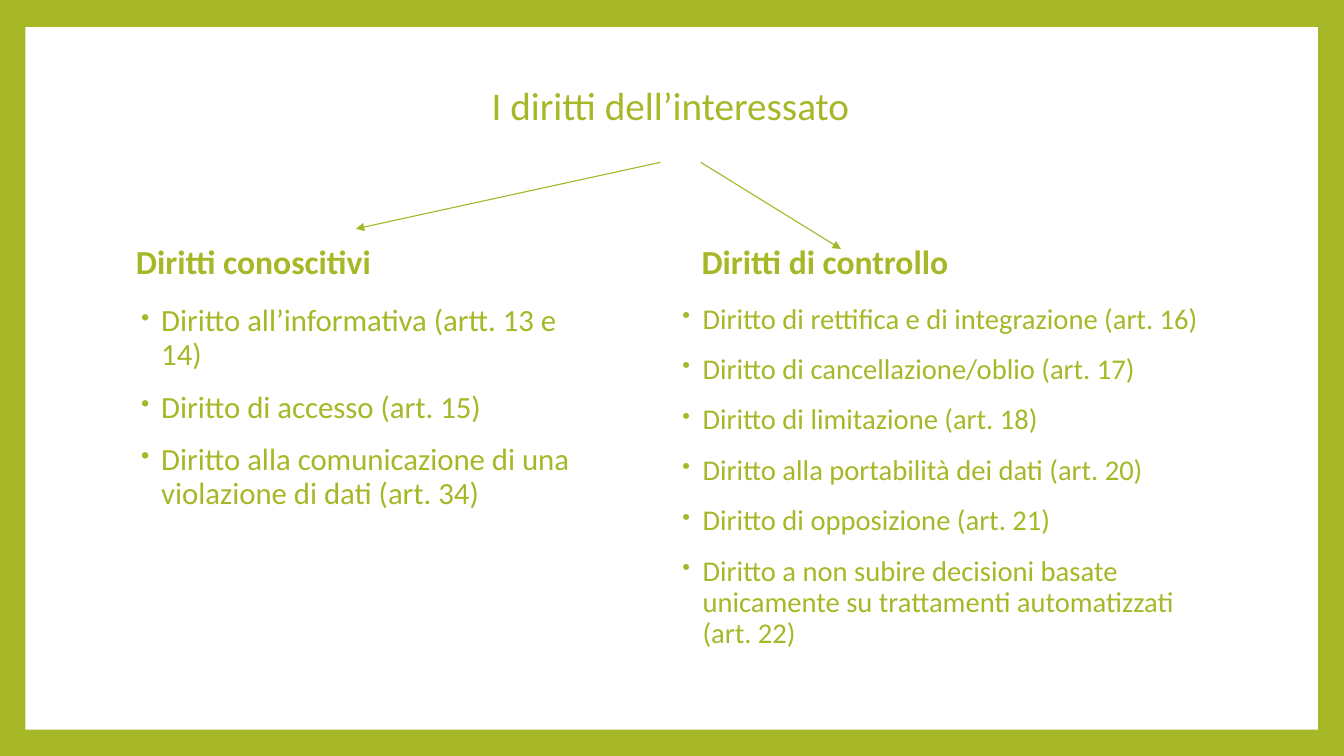
from lxml.etree import SubElement
from pptx import Presentation
from pptx.dml.color import RGBColor
from pptx.enum.shapes import MSO_CONNECTOR as CONN, MSO_SHAPE as SHAPE
from pptx.enum.text import MSO_ANCHOR as ANCHOR, PP_ALIGN as ALIGN
from pptx.oxml.ns import qn
from pptx.util import Inches, Pt

GREEN = RGBColor(0xA6, 0xB7, 0x27)
WHITE = RGBColor(0xFF, 0xFF, 0xFF)
WIDTH, HEIGHT = Inches(13.33), Inches(7.5)

# Positions are percentages of the slide's width and height.
LEFT, RIGHT = 9.38, 51.46
HEADING_TOP, HEADING_W, HEADING_H = 29.2, 39, 11.33
LIST_H = 49.33

COLUMNS = [
    {
        "heading": "Diritti conoscitivi",
        "heading_x": LEFT,
        "list_box": (LEFT, 39.73, 36, LIST_H),
        "size": 22,
        "rights": [
            "Diritto all’informativa (artt. 13 e 14)",
            "Diritto di accesso (art. 15)",
            "Diritto alla comunicazione di una violazione di dati (art. 34)",
        ],
        "arrow": (49.14, 21.47, 26.48, 30.27),
    },
    {
        "heading": "Diritti di controllo",
        "heading_x": RIGHT,
        "list_box": (49.66, 39.6, 40.8, LIST_H),
        "size": 20.4,
        "rights": [
            "Diritto di rettifica e di integrazione (art. 16)",
            "Diritto di cancellazione/oblio (art. 17)",
            "Diritto di limitazione (art. 18)",
            "Diritto alla portabilità dei dati (art. 20)",
            "Diritto di opposizione (art. 21)",
            "Diritto a non subire decisioni basate unicamente su trattamenti "
            "automatizzati (art. 22)",
        ],
        "arrow": (52.14, 21.47, 62.57, 32.93),
    },
]


def to_emu(box):
    """Turn alternating horizontal and vertical percentages into lengths."""
    return [round(share / 100 * (HEIGHT if i % 2 else WIDTH))
            for i, share in enumerate(box)]


def add_panel(slide, box):
    sp = slide.shapes.add_shape(SHAPE.RECTANGLE, *to_emu(box))
    sp.shadow.inherit = False
    sp.fill.solid()
    sp.fill.fore_color.rgb = WHITE
    sp.line.fill.background()


def add_bullet(p):
    pPr = p._p.get_or_add_pPr()
    pPr.set("marL", str(Inches(0.25)))
    pPr.set("indent", str(Inches(-0.2)))
    color = SubElement(pPr, qn("a:buClr"))
    SubElement(color, qn("a:srgbClr"), val=str(GREEN))
    SubElement(pPr, qn("a:buSzPct"), val="80000")
    SubElement(pPr, qn("a:buChar"), char="•")


def add_text(slide, box, lines, size, bold=False, align=ALIGN.LEFT,
             anchor=ANCHOR.MIDDLE, bullets=False):
    tf = slide.shapes.add_textbox(*to_emu(box)).text_frame
    tf.word_wrap = True
    tf.vertical_anchor = anchor
    font_format = {"name": "Calibri", "size": Pt(size), "bold": bold}
    for i, line in enumerate(lines):
        p = tf.add_paragraph() if i else tf.paragraphs[0]
        p.alignment = align
        p.line_spacing = 0.9
        if bullets:
            p.space_before = Pt(14)
            add_bullet(p)
        r = p.add_run()
        r.text = line
        for name, value in font_format.items():
            setattr(r.font, name, value)
        r.font.color.rgb = GREEN


def add_arrow(slide, ends):
    arrow = slide.shapes.add_connector(CONN.STRAIGHT, *to_emu(ends))
    arrow.line.color.rgb = GREEN
    arrow.line.width = Pt(0.79)
    SubElement(arrow.line._get_or_add_ln(), qn("a:tailEnd"), type="triangle")
    SubElement(arrow._element.spPr, qn("a:effectLst"))


def main():
    prs = Presentation()
    prs.slide_width, prs.slide_height = WIDTH, HEIGHT
    slide = prs.slides.add_slide(prs.slide_layouts[6])
    slide.background.fill.solid()
    slide.background.fill.fore_color.rgb = GREEN

    add_panel(slide, (1.88, 3.6, 96.17, 92.93))
    add_text(slide, (LEFT, 8.93, 81, 10.53), ["I diritti dell’interessato"],
             28, align=ALIGN.CENTER)
    for column in COLUMNS:
        heading_box = (column["heading_x"], HEADING_TOP, HEADING_W, HEADING_H)
        add_text(slide, heading_box, [column["heading"]], 24, bold=True)
        add_text(slide, column["list_box"], column["rights"], column["size"],
                 anchor=ANCHOR.TOP, bullets=True)
        add_arrow(slide, column["arrow"])

    prs.save("out.pptx")


if __name__ == "__main__":
    main()
